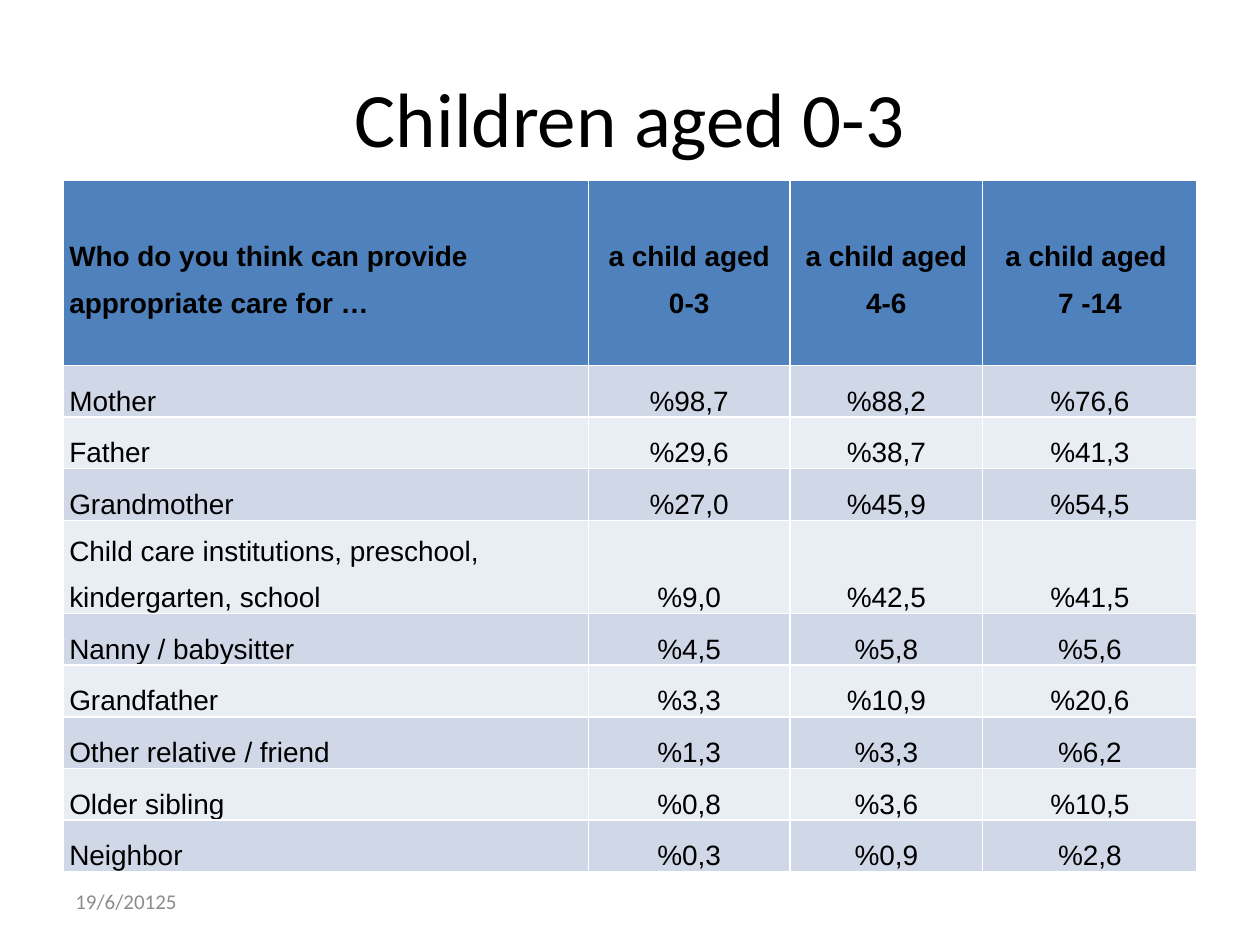
from pptx import Presentation
from pptx.dml.color import RGBColor
from pptx.enum.text import MSO_ANCHOR, PP_ALIGN
from pptx.util import Inches, Pt

BLACK = RGBColor(0x00, 0x00, 0x00)
GRAY = RGBColor(0x8C, 0x8C, 0x8C)
HEADER_BLUE = RGBColor(0x4F, 0x81, 0xBD)
BAND_DARK = RGBColor(0xD0, 0xD8, 0xE8)
BAND_LIGHT = RGBColor(0xE9, 0xED, 0xF4)

COL_WIDTHS = [4.17, 1.6, 1.53, 1.7]
HEADER_HEIGHT, ROW_HEIGHT = 1.47, 0.41

CARE_ROWS = [
    ("Who do you think can provide appropriate care for …",
     "a child aged 0-3", "a child aged 4-6", "a child aged \n7 -14"),
    ("Mother", "%98,7", "%88,2", "%76,6"),
    ("Father", "%29,6", "%38,7", "%41,3"),
    ("Grandmother", "%27,0", "%45,9", "%54,5"),
    ("Child care institutions, preschool, kindergarten, school",
     "%9,0", "%42,5", "%41,5"),
    ("Nanny / babysitter", "%4,5", "%5,8", "%5,6"),
    ("Grandfather", "%3,3", "%10,9", "%20,6"),
    ("Other relative / friend", "%1,3", "%3,3", "%6,2"),
    ("Older sibling", "%0,8", "%3,6", "%10,5"),
    ("Neighbor", "%0,3", "%0,9", "%2,8"),
]


def set_font(p, name, size, color, bold=False):
    p.font.name = name
    p.font.size = Pt(size)
    p.font.color.rgb = color
    p.font.bold = bold


def add_title(s, text):
    sp = s.shapes.title
    sp.left, sp.top = Inches(0.5), Inches(0.3)
    sp.width, sp.height = Inches(9), Inches(1.25)
    tf = sp.text_frame
    tf.text = text
    tf.vertical_anchor = MSO_ANCHOR.MIDDLE
    p = tf.paragraphs[0]
    p.alignment = PP_ALIGN.CENTER
    set_font(p, "Calibri", 44, BLACK)


def fill_cell(cell, text, row, col):
    header = row == 0
    cell.text = text
    cell.margin_left = cell.margin_right = Inches(0.05)
    cell.margin_top = cell.margin_bottom = 0
    cell.vertical_anchor = MSO_ANCHOR.MIDDLE if header else MSO_ANCHOR.BOTTOM
    cell.fill.solid()
    band = BAND_DARK if row % 2 else BAND_LIGHT
    cell.fill.fore_color.rgb = HEADER_BLUE if header else band
    for p in cell.text_frame.paragraphs:
        p.alignment = PP_ALIGN.CENTER if col else PP_ALIGN.LEFT
        p.line_spacing = 1.5
        set_font(p, "Arial", 16, BLACK, bold=header)


def add_care_table(s, rows):
    # The default table style supplies the white cell borders
    height = HEADER_HEIGHT + ROW_HEIGHT * (len(rows) - 1)
    table = s.shapes.add_table(len(rows), len(COL_WIDTHS), Inches(0.5), Inches(1.43),
                               Inches(sum(COL_WIDTHS)), Inches(height)).table
    for column, width in zip(table.columns, COL_WIDTHS):
        column.width = Inches(width)
    for i, values in enumerate(rows):
        table.rows[i].height = Inches(ROW_HEIGHT if i else HEADER_HEIGHT)
        for j, text in enumerate(values):
            fill_cell(table.cell(i, j), text, i, j)


def add_date(s, text):
    tf = s.shapes.add_textbox(Inches(0.5), Inches(6.95),
                              Inches(2.33), Inches(0.4)).text_frame
    tf.word_wrap = True
    tf.vertical_anchor = MSO_ANCHOR.MIDDLE
    tf.text = text
    set_font(tf.paragraphs[0], "Calibri", 12, GRAY)


def main():
    prs = Presentation()
    prs.slide_width, prs.slide_height = Inches(10), Inches(7.5)
    s = prs.slides.add_slide(prs.slide_layouts[5])  # Title Only

    add_title(s, "Children aged 0-3")
    add_care_table(s, CARE_ROWS)
    add_date(s, "19/6/20125")

    prs.save("out.pptx")


if __name__ == "__main__":
    main()
